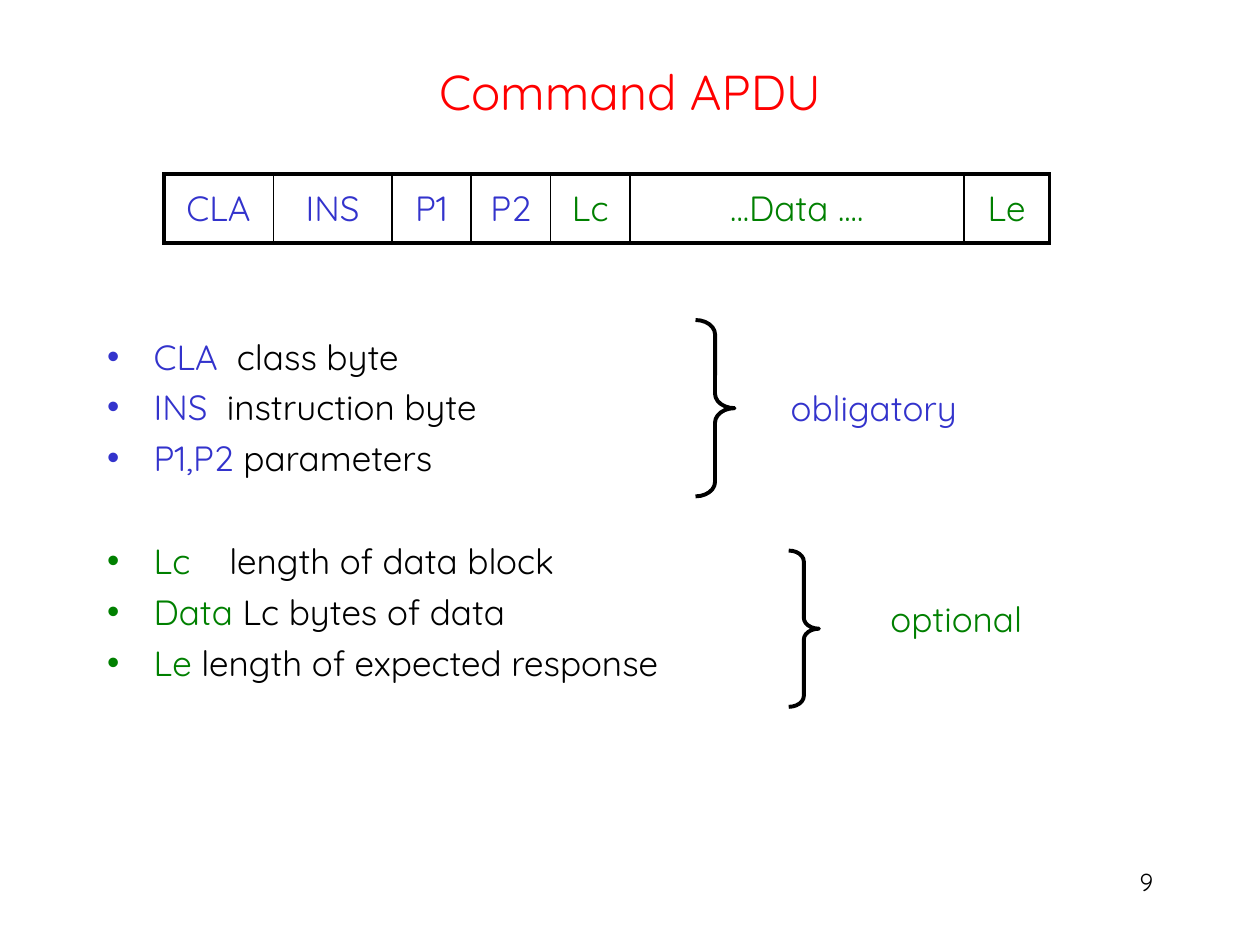
from lxml.etree import SubElement
from pptx import Presentation
from pptx.dml.color import RGBColor
from pptx.enum.shapes import MSO_SHAPE
from pptx.enum.text import MSO_ANCHOR, MSO_AUTO_SIZE, PP_ALIGN
from pptx.oxml.ns import qn
from pptx.util import Inches, Pt

HUES = {"red": "FF0000", "blue": "3333CC", "green": "008000", "black": "000000"}

CELLS = [
    ("CLA", 0.87, "blue"),
    ("INS", 0.94, "blue"),
    ("P1", 0.63, "blue"),
    ("P2", 0.63, "blue"),
    ("Lc", 0.63, "green"),
    ("...Data ....", 2.65, "green"),
    ("Le", 0.68, "green"),
]

ITEMS = [
    ("CLA", "\tclass byte", "blue", 0, 1.03),
    ("INS", "\tinstruction byte", "blue", 5, 0.95),
    ("P1,P2", " parameters", "blue", 5, None),
    ("Lc", "\tlength of data block", "green", 35, 0.97),
    ("Data", " Lc bytes of data", "green", 5, None),
    ("Le", " length of expected response", "green", 5, None),
]


class Deck:
    face = "Quicksand"
    thick = 2.25
    thin = 1
    hang = 0.37

    def __init__(self):
        self.file = Presentation()
        self.file.slide_width, self.file.slide_height = Inches(10), Inches(7.5)
        self.slide = self.file.slides.add_slide(self.file.slide_layouts[1])

    def put(self, shape, box):
        for name, value in zip(("left", "top", "width", "height"), box):
            setattr(shape, name, Inches(value))

    def run(self, para, text, hue, size=20):
        run = para.add_run()
        run.text = text
        for name, value in {"name": self.face, "size": Pt(size), "bold": False}.items():
            setattr(run.font, name, value)
        run.font.color.rgb = RGBColor.from_string(HUES[hue])

    def frame(self, shape, **extra):
        style = {"word_wrap": True, "auto_size": MSO_AUTO_SIZE.NONE, **extra}
        for name, value in style.items():
            setattr(shape.text_frame, name, value)
        return shape.text_frame

    def title(self, text, box):
        shape = self.slide.shapes.title
        self.put(shape, box)
        para = self.frame(shape, vertical_anchor=MSO_ANCHOR.MIDDLE).paragraphs[0]
        para.alignment = PP_ALIGN.CENTER
        self.run(para, text, "red", 28)

    def list(self, items, box, inset):
        shape = self.slide.placeholders[1]
        self.put(shape, box)
        frame = self.frame(shape, margin_top=Inches(inset))
        for i, (term, rest, hue, gap, stop) in enumerate(items):
            para = frame.add_paragraph() if i else frame.paragraphs[0]
            para.space_before = Pt(gap)
            self.bullet(para, hue, stop)
            self.run(para, term, hue)
            self.run(para, rest, "black")

    def bullet(self, para, hue, stop):
        props = para._p.get_or_add_pPr()
        props.set("marL", str(Inches(self.hang)))
        props.set("indent", str(-Inches(self.hang)))
        tint = SubElement(props, qn("a:buClr"))
        SubElement(tint, qn("a:srgbClr"), val=HUES[hue])
        SubElement(props, qn("a:buChar"), char="•")
        if stop:
            tabs = SubElement(props, qn("a:tabLst"))
            SubElement(tabs, qn("a:tab"), pos=str(Inches(stop)), algn="l")

    def label(self, text, hue, box, size=20, align=PP_ALIGN.CENTER):
        shape = self.slide.shapes.add_textbox(*map(Inches, box))
        para = self.frame(shape).paragraphs[0]
        para.alignment = align
        self.run(para, text, hue, size)

    def brace(self, box, bend):
        shape = self.slide.shapes.add_shape(MSO_SHAPE.RIGHT_BRACE, *map(Inches, box))
        shape.shadow.inherit = False
        shape.adjustments[0] = bend
        shape.fill.background()
        shape.line.width = Pt(self.thick)
        shape.line.color.rgb = RGBColor.from_string(HUES["black"])

    def edge(self, cell, side, width):
        props = cell._tc.get_or_add_tcPr()
        line = SubElement(props, qn(f"a:ln{side}"), w=str(Pt(width)))
        fill = SubElement(line, qn("a:solidFill"))
        SubElement(fill, qn("a:srgbClr"), val=HUES["black"])

    def table(self, cells, box):
        last = len(cells) - 1
        grid = self.slide.shapes.add_table(1, len(cells), *map(Inches, box)).table
        grid.first_row = grid.horz_banding = False
        for i, (text, width, hue) in enumerate(cells):
            grid.columns[i].width = Inches(width)
            cell = grid.cell(0, i)
            cell.vertical_anchor = MSO_ANCHOR.MIDDLE
            para = cell.text_frame.paragraphs[0]
            para.alignment = PP_ALIGN.CENTER
            self.run(para, text, hue)
            self.edge(cell, "L", self.thin if i else self.thick)
            self.edge(cell, "R", self.thin if i < last else self.thick)
            self.edge(cell, "T", self.thick)
            self.edge(cell, "B", self.thick)
            cell.fill.background()


def main():
    deck = Deck()
    deck.title("Command APDU", (0.75, 0.3, 8.5, 0.84))
    deck.list(ITEMS, (0.75, 1.15, 8.49, 5.51), 1.51)
    deck.label("9", "black", (7.17, 6.83, 2.08, 0.5), 14, PP_ALIGN.RIGHT)
    deck.table(CELLS, (1.3, 1.38, 7.03, 0.55))
    deck.brace((5.52, 2.54, 0.31, 1.4), 0.37)
    deck.brace((6.26, 4.37, 0.24, 1.24), 0.36)
    deck.label("obligatory", "blue", (5.52, 3.02, 2.83, 0.44))
    deck.label("optional", "green", (6.94, 4.69, 1.3, 0.44))
    deck.file.save("out.pptx")


if __name__ == "__main__":
    main()
